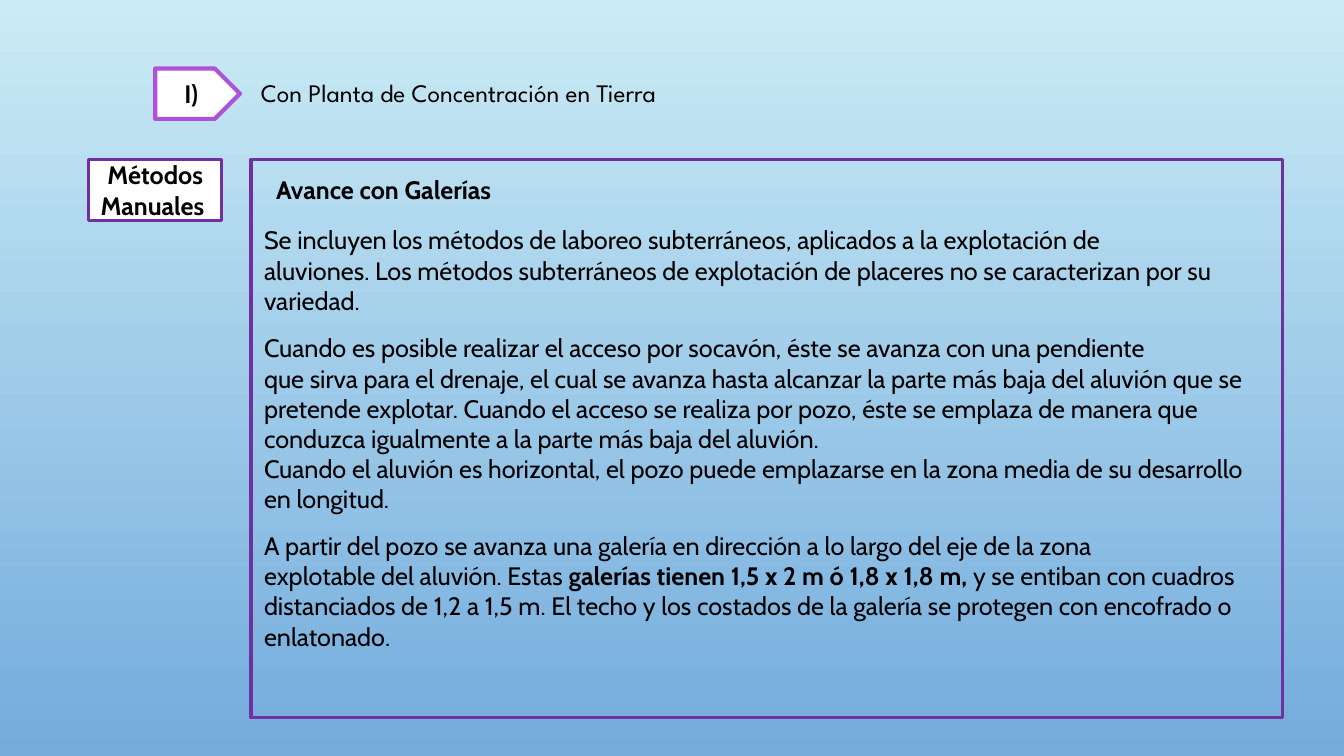
from pptx import Presentation
from pptx.dml.color import RGBColor as Rgb
from pptx.enum.shapes import MSO_SHAPE as Shape
from pptx.enum.text import MSO_ANCHOR as Anchor, MSO_AUTO_SIZE as AutoSize, PP_ALIGN as Align
from pptx.util import Inches, Pt

COLORS = {"sky": "CBECF5", "blue": "73ABDD", "white": "FFFFFF",
          "black": "000000", "violet": "AE52D9", "purple": "7030A0"}
WIDTH, HEIGHT = 13.33, 7.5
LEFT_COLUMN, MAIN_COLUMN = 0.88, 2.49
HEADER_ROW, BODY_ROW = 0.68, 1.58

# Each passage: top offset in the panel, height, paragraphs of (text, bold) spans
PASSAGES = [
    (0.6, 1.01, [
        [("Se incluyen los métodos de laboreo subterráneos, aplicados a la explotación de", False)],
        [("aluviones. Los métodos subterráneos de explotación de placeres no se caracterizan por su", False)],
        [("variedad.", False)],
    ]),
    (1.67, 1.92, [
        [("Cuando es posible realizar el acceso por socavón, éste se avanza con una pendiente", False)],
        [("que sirva para el drenaje, el cual se avanza hasta alcanzar la parte más baja del aluvión "
          "que se pretende explotar. Cuando el acceso se realiza por pozo, éste se emplaza de manera "
          "que conduzca igualmente a la parte más baja del aluvión.", False)],
        [("Cuando el aluvión es horizontal, el pozo puede emplazarse en la zona media de su "
          "desarrollo en longitud.", False)],
    ]),
    (3.63, 1.31, [
        [("A partir del pozo se avanza una galería en dirección a lo largo del eje de la zona", False)],
        [("explotable del aluvión. Estas ", False),
         ("galerías tienen 1,5 x 2 m ó 1,8 x 1,8 m,", True),
         (" y se entiban con cuadros", False)],
        [("distanciados de 1,2 a 1,5 m. El techo y los costados de la galería se protegen con "
          "encofrado o", False)],
        [("enlatonado.", False)],
    ]),
]


def color(name):
    return Rgb.from_string(COLORS[name])


def write(frame, paragraphs, font="Cabin", align=Align.LEFT):
    frame.word_wrap = True
    for index, spans in enumerate(paragraphs):
        para = frame.add_paragraph() if index else frame.paragraphs[0]
        para.alignment = align
        for text, bold in spans:
            span = para.add_run()
            span.text = text
            for key, value in {"name": font, "size": Pt(18), "bold": bold}.items():
                setattr(span.font, key, value)
            span.font.color.rgb = color("black")


def add_text(page, box, paragraphs, font="Cabin"):
    frame = page.shapes.add_textbox(*map(Inches, box)).text_frame
    write(frame, paragraphs, font)
    frame.auto_size = AutoSize.SHAPE_TO_FIT_TEXT


def add_frame(page, kind, box, line, weight, fill=None, label=None):
    shape = page.shapes.add_shape(kind, *map(Inches, box))
    shape.shadow.inherit = False
    if fill:
        shape.fill.solid()
        shape.fill.fore_color.rgb = color(fill)
    else:
        shape.fill.background()
    shape.line.color.rgb = color(line)
    shape.line.width = Pt(weight)
    if label:
        shape.text_frame.vertical_anchor = Anchor.MIDDLE
        write(shape.text_frame, [[(label, True)]], align=Align.CENTER)


def paint_background(page):
    fill = page.background.fill
    fill.gradient()
    fill.gradient_angle = 270
    for stop, name in zip(fill.gradient_stops, ("sky", "blue")):
        stop.color.rgb = color(name)


def add_header(page, left, top):
    # Numbered tag and section title
    add_frame(page, Shape.PENTAGON, (left, top, 0.84, 0.5), "violet", 3, "white", "I)")
    add_text(page, (left + 0.95, top + 0.04, 5.04, 0.4),
             [[("Con Planta de Concentración en Tierra", False)]], "League Spartan")


def add_method_label(page, left, top):
    add_frame(page, Shape.RECTANGLE, (left, top, 1.32, 0.61), "purple", 2.25,
              "white", "Métodos Manuales ")


def add_panel(page, left, top, width, height):
    # Outline, heading and passages
    add_frame(page, Shape.RECTANGLE, (left, top, width, height), "purple", 2.25)
    add_text(page, (left + 0.15, top + 0.1, 6.67, 0.4), [[("Avance con Galerías", True)]])
    for offset, passage_height, paragraphs in PASSAGES:
        add_text(page, (left + 0.03, top + offset, width - 0.18, passage_height), paragraphs)


def main():
    deck = Presentation()
    deck.slide_width, deck.slide_height = Inches(WIDTH), Inches(HEIGHT)
    page = deck.slides.add_slide(deck.slide_layouts[6])
    paint_background(page)
    add_header(page, 1.54, HEADER_ROW)
    add_method_label(page, LEFT_COLUMN, BODY_ROW)
    add_panel(page, MAIN_COLUMN, BODY_ROW, 10.23, 5.54)
    deck.save("out.pptx")


if __name__ == "__main__":
    main()
